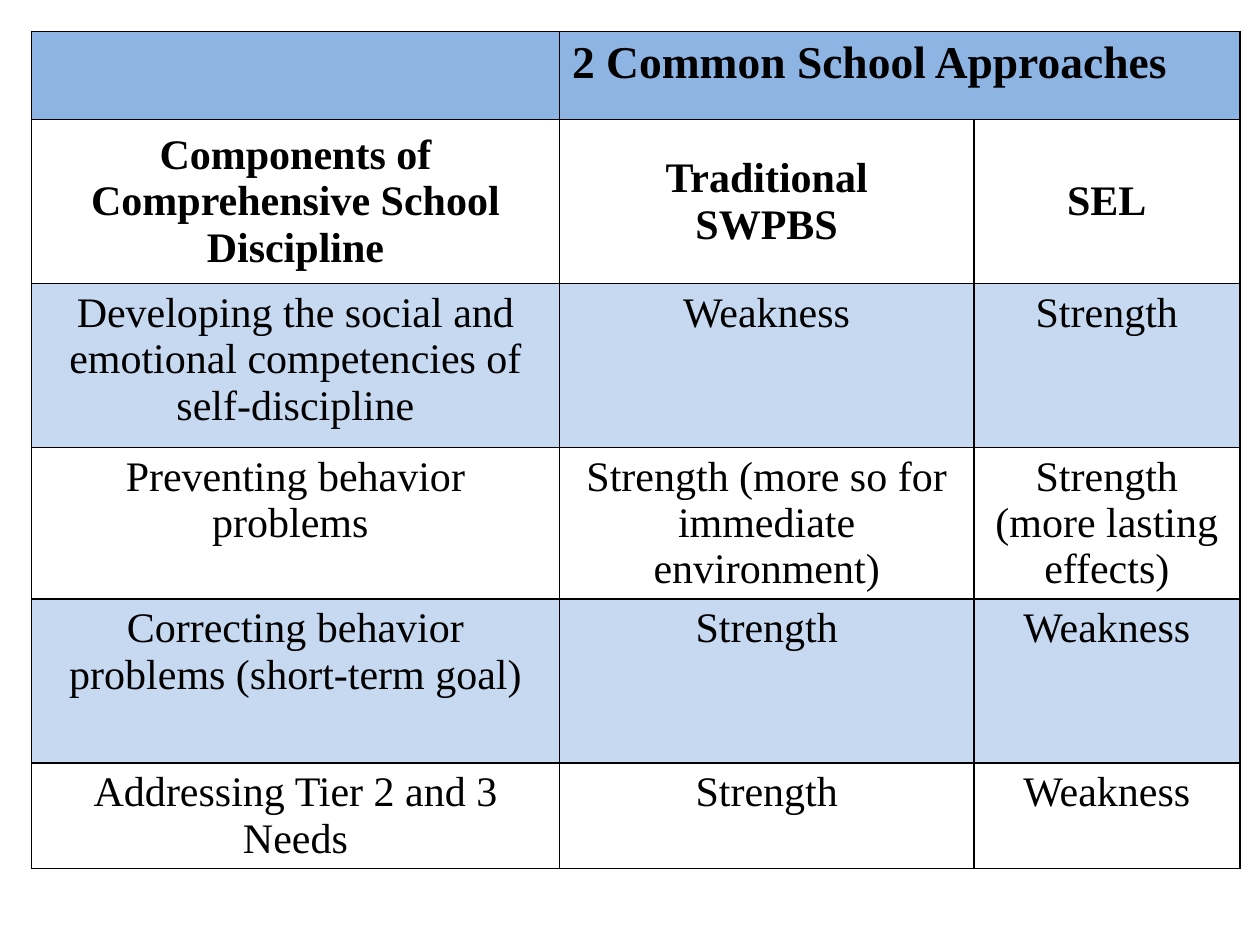
"""Build a slide with a table comparing two school discipline approaches."""
from lxml import etree
from pptx import Presentation
from pptx.dml.color import RGBColor
from pptx.enum.text import MSO_ANCHOR, PP_ALIGN
from pptx.oxml.ns import qn
from pptx.util import Inches, Pt

CENTER, LEFT = PP_ALIGN.CENTER, PP_ALIGN.LEFT
MIDDLE, TOP = MSO_ANCHOR.MIDDLE, MSO_ANCHOR.TOP
FONT = "Times New Roman"
COLORS = {"header": "8EB4E3", "band": "C6D9F1", "plain": "FFFFFF", "ink": "000000"}
COL_WIDTHS = [4.19, 3.29, 2.11]
ROW_HEIGHTS = [0.7, 1.3, 1.3, 1.08, 1.3, 0.81]
ROWS = [
    ["", "2 Common School Approaches", ""],
    ["Components of Comprehensive School Discipline", "Traditional\nSWPBS", "SEL"],
    ["Developing the social and emotional competencies of self-discipline",
     "Weakness", "Strength"],
    ["Preventing behavior problems ", "Strength (more so for immediate environment)",
     "Strength (more lasting effects)"],
    ["Correcting behavior problems (short-term goal)", "Strength", "Weakness"],
    ["Addressing Tier 2 and 3 Needs", "Strength", "Weakness"],
]


def set_borders(cell):
    """Draw a one point line on each side of a cell."""
    tcPr = cell._tc.get_or_add_tcPr()
    for side in ("lnL", "lnR", "lnT", "lnB"):
        ln = etree.SubElement(tcPr, qn(f"a:{side}"), w=str(Pt(1)))
        fill = etree.SubElement(ln, qn("a:solidFill"))
        etree.SubElement(fill, qn("a:srgbClr"), val=COLORS["ink"])


def write_text(cell, text, size=24, bold=False, align=CENTER, anchor=TOP):
    """Fill a cell with formatted text, one paragraph a line."""
    cell.text = text
    cell.vertical_anchor = anchor
    for p in cell.text_frame.paragraphs:
        p.alignment = align
        p.font.size = Pt(size)
        for r in p.runs:
            r.font.name = FONT
            r.font.size = Pt(size)
            r.font.bold = bold
            r.font.color.rgb = RGBColor.from_string(COLORS["ink"])


prs = Presentation()
prs.slide_width, prs.slide_height = Inches(10), Inches(7.5)
s = prs.slides.add_slide(prs.slide_layouts[6])

table = s.shapes.add_table(
    len(ROWS), len(COL_WIDTHS), Inches(0.25), Inches(0.25),
    Inches(sum(COL_WIDTHS)), Inches(sum(ROW_HEIGHTS))).table
for column, width in zip(table.columns, COL_WIDTHS):
    column.width = Inches(width)
for row, height in zip(table.rows, ROW_HEIGHTS):
    row.height = Inches(height)
table.cell(0, 1).merge(table.cell(0, 2))

formats = {0: {"size": 26, "bold": True, "align": LEFT},
           1: {"bold": True, "anchor": MIDDLE}}
for i, texts in enumerate(ROWS):
    color = "header" if i == 0 else "plain" if i % 2 else "band"
    for j, text in enumerate(texts):
        cell = table.cell(i, j)
        set_borders(cell)
        cell.fill.solid()
        cell.fill.fore_color.rgb = RGBColor.from_string(COLORS[color])
        write_text(cell, text, **formats.get(i, {}))

prs.save("out.pptx")
